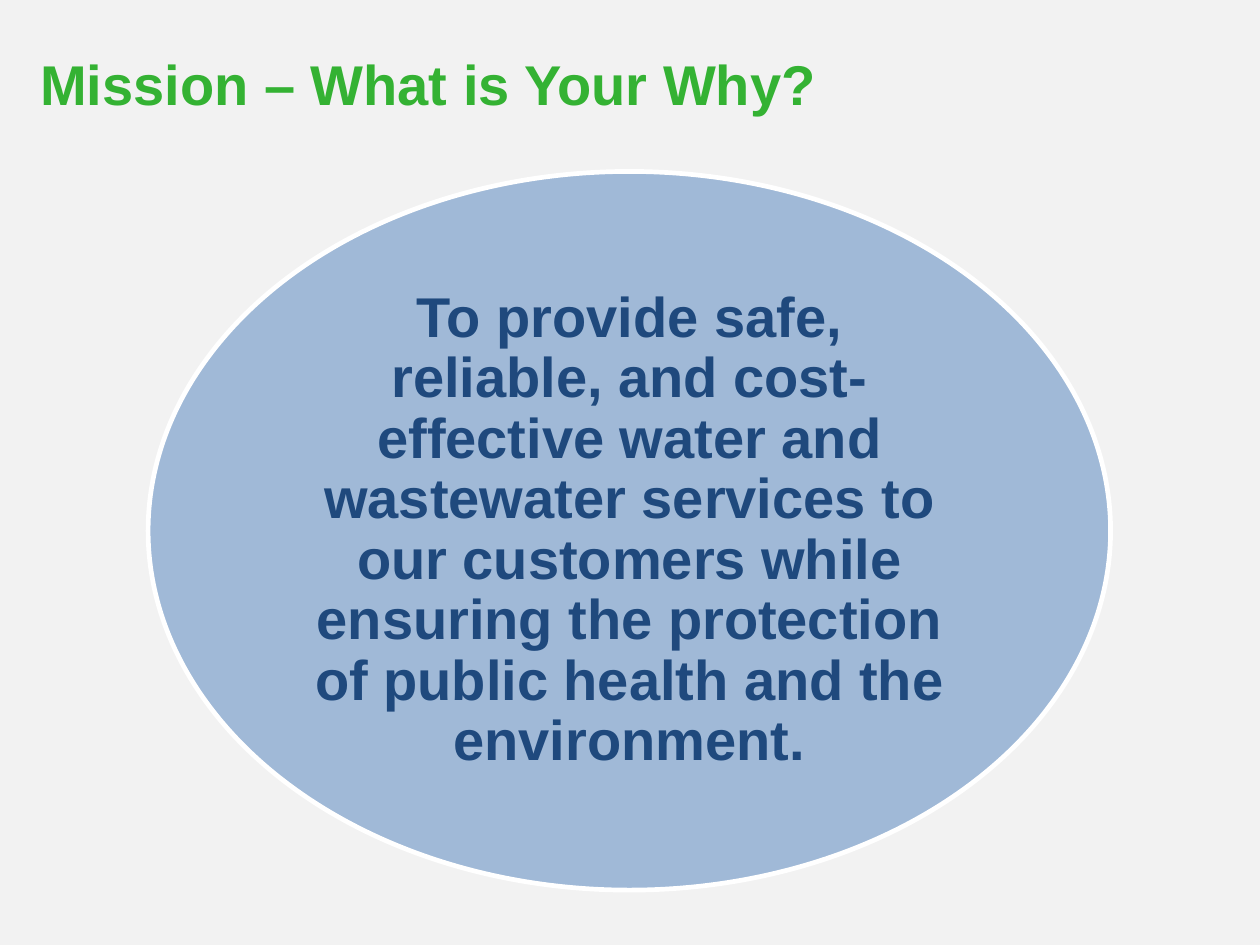
from lxml.etree import SubElement
from pptx import Presentation
from pptx.dml.color import RGBColor
from pptx.enum.shapes import MSO_SHAPE as Shape
from pptx.enum.text import MSO_ANCHOR as Anchor, MSO_AUTO_SIZE as AutoSize, PP_ALIGN as Align
from pptx.oxml.ns import qn
from pptx.util import Pt

BACKGROUND, GREEN, BLUE, NAVY, WHITE = "F2F2F2", "34B233", "4F81BD", "1F497D", "FFFFFF"
TITLE = "Mission – What is Your Why?"
MISSION = (
    "To provide safe, reliable, and cost-effective water and wastewater services "
    "to our customers while ensuring the protection of public health and the environment."
)
HEADING_FONT = {"name": "Arial", "size": Pt(24), "bold": True}


def set_fill(fill, color):
    fill.solid()
    fill.fore_color.rgb = RGBColor.from_string(color)


def set_values(target, values):
    for name, value in values.items():
        setattr(target, name, value)


def place(shape, box):
    set_values(shape, dict(zip(("left", "top", "width", "height"), map(Pt, box))))


def write_text(shape, text, color, align, inset, line_spacing):
    frame = shape.text_frame
    frame.text = text
    margins = dict.fromkeys(("margin_left", "margin_top", "margin_right", "margin_bottom"), Pt(inset))
    set_values(frame, {
        "word_wrap": True,
        "auto_size": AutoSize.NONE,
        "vertical_anchor": Anchor.MIDDLE,
        **margins,
    })
    paragraph = frame.paragraphs[0]
    set_values(paragraph, {"alignment": align, "line_spacing": line_spacing})
    font = paragraph.runs[0].font
    set_values(font, HEADING_FONT)
    font.color.rgb = RGBColor.from_string(color)


def add_title(slide, box):
    title = slide.shapes.title
    place(title, box)
    write_text(title, TITLE, GREEN, Align.LEFT, 7.2, 1.0)


def add_mission(slide, box):
    left, top, width, height = box
    ellipse = slide.shapes.add_shape(Shape.OVAL, *map(Pt, box))
    ellipse.shadow.inherit = False
    set_fill(ellipse.fill, BLUE)
    color = ellipse.fill._xPr.find(qn("a:solidFill"))[0]
    SubElement(color, qn("a:alpha"), val="50000")
    set_fill(ellipse.line.fill, WHITE)
    ellipse.line.width = Pt(2)

    text_width, text_height = width / 2 ** 0.5, height / 2 ** 0.5
    text_left = left + (width - text_width) / 2
    text_top = top + (height - text_height) / 2
    statement = slide.shapes.add_textbox(*map(Pt, (text_left, text_top, text_width, text_height)))
    write_text(statement, MISSION, NAVY, Align.CENTER, 7.2, 0.9)


def main():
    presentation = Presentation()
    set_values(presentation, {"slide_width": Pt(540), "slide_height": Pt(405)})
    slide = presentation.slides.add_slide(presentation.slide_layouts[5])
    set_fill(slide.background.fill, BACKGROUND)
    add_title(slide, (10, 11, 394.5, 49))
    add_mission(slide, (63.5, 73.5, 412.5, 308))
    presentation.save("out.pptx")


if __name__ == "__main__":
    main()
